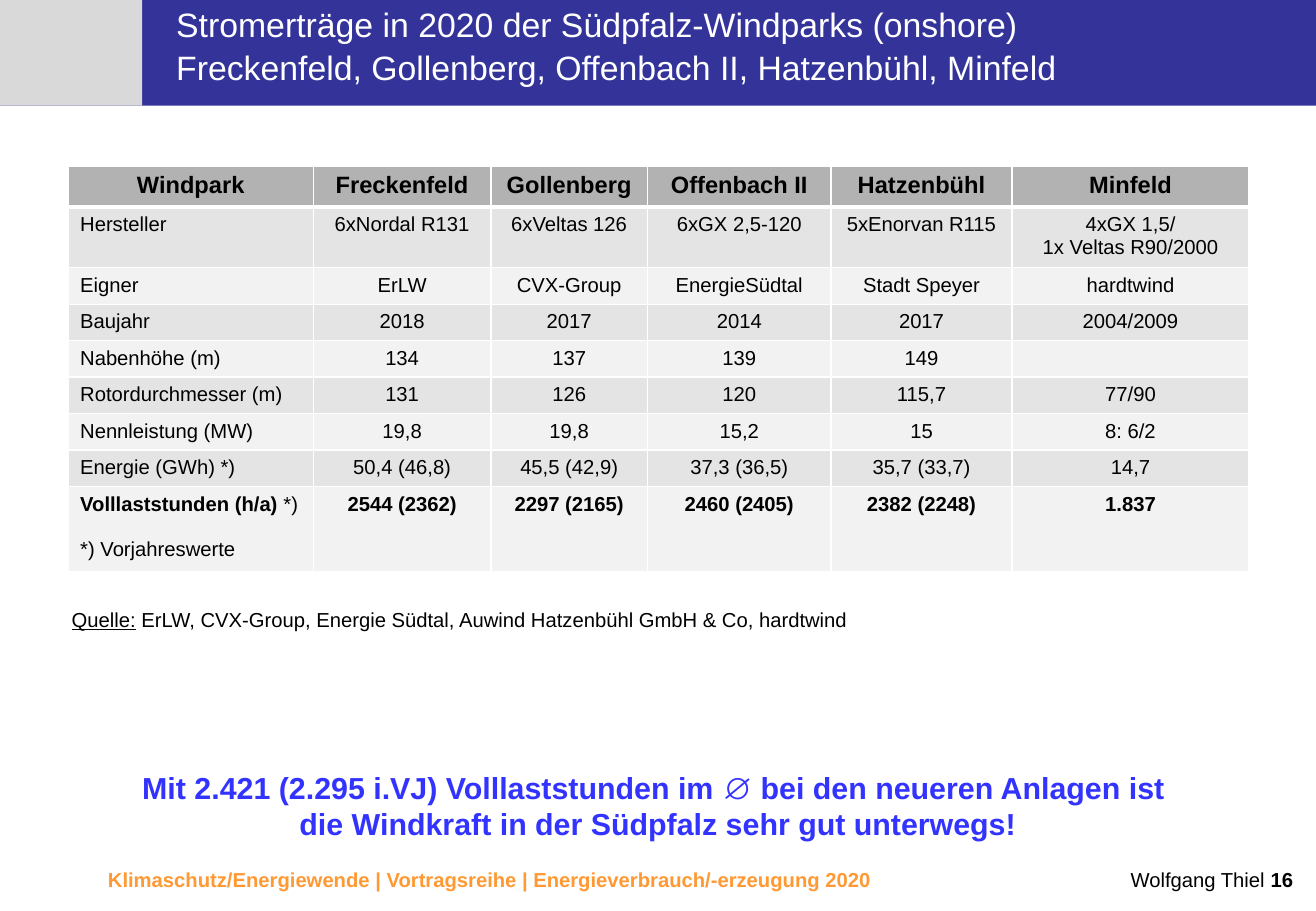
import pptx
import pptx.dml.color
import pptx.enum.shapes
import pptx.enum.text
import pptx.oxml
import pptx.oxml.ns
import pptx.util
from pptx.util import Inches

RGBColor = pptx.dml.color.RGBColor
ALIGN = pptx.enum.text.PP_ALIGN

NAVY = RGBColor(0x33, 0x33, 0x99)
LIGHT_GREY = RGBColor(0xD9, 0xD9, 0xD9)
HEADER_GREY = RGBColor(0xB2, 0xB2, 0xB2)
BANDS = (RGBColor(0xF2, 0xF2, 0xF2), RGBColor(0xE4, 0xE4, 0xE4))
WHITE = RGBColor(0xFF, 0xFF, 0xFF)
BLACK = RGBColor(0x00, 0x00, 0x00)
ORANGE = RGBColor(0xFF, 0x99, 0x33)
BLUE = RGBColor(0x33, 0x33, 0xFF)

COLUMN_WIDTHS = (2.02, 1.46, 1.29, 1.51, 1.49, 1.95)
ROW_HEIGHTS = (0.33, 0.5) + 6 * (0.3,) + (0.7,)
WIND_PARKS = (
    ("Windpark", "Freckenfeld", "Gollenberg", "Offenbach II", "Hatzenbühl", "Minfeld"),
    ("Hersteller", "6xNordal R131", "6xVeltas 126", "6xGX 2,5-120", "5xEnorvan R115",
     "4xGX 1,5/\v1x Veltas R90/2000"),
    ("Eigner", "ErLW", "CVX-Group", "EnergieSüdtal", "Stadt Speyer", "hardtwind"),
    ("Baujahr", "2018", "2017", "2014", "2017", "2004/2009"),
    ("Nabenhöhe (m)", "134", "137", "139", "149", ""),
    ("Rotordurchmesser (m)", "131", "126", "120", "115,7", "77/90"),
    ("Nennleistung (MW)", "19,8", "19,8", "15,2", "15", "8: 6/2"),
    ("Energie (GWh) *)", "50,4 (46,8)", "45,5 (42,9)", "37,3 (36,5)", "35,7 (33,7)", "14,7"),
    ("", "2544 (2362)", "2297 (2165)", "2460 (2405)", "2382 (2248)", "1.837"),
)


def style_paragraph(paragraph, size, color, bold=False, align=ALIGN.LEFT):
    paragraph.alignment = align
    font = paragraph.font
    font.name = "Arial"
    font.size = pptx.util.Pt(size)
    font.bold = bold
    font.color.rgb = color


def add_runs(paragraph, *texts):
    runs = []
    for text in texts:
        run = paragraph.add_run()
        run.text = text
        runs.append(run)
    return runs


def add_block(slide, left, top, width, height, color):
    shape = slide.shapes.add_shape(
        pptx.enum.shapes.MSO_SHAPE.RECTANGLE,
        Inches(left), Inches(top), Inches(width), Inches(height))
    shape.shadow.inherit = False
    shape.fill.solid()
    shape.fill.fore_color.rgb = color
    shape.line.fill.background()


def add_text(slide, left, top, width, height, text, size, color,
             bold=False, align=ALIGN.LEFT, margins=(0, 0), wrap=True):
    """Add a text box and return its paragraph; margins are horizontal, vertical."""
    box = slide.shapes.add_textbox(Inches(left), Inches(top), Inches(width), Inches(height))
    frame = box.text_frame
    frame.word_wrap = wrap
    frame.margin_left = frame.margin_right = Inches(margins[0])
    frame.margin_top = frame.margin_bottom = Inches(margins[1])
    paragraph = frame.paragraphs[0]
    paragraph.text = text
    style_paragraph(paragraph, size, color, bold, align)
    return paragraph


def add_cell_borders(cell, row):
    properties = cell._tc.get_or_add_tcPr()
    for side in "LRTB":
        points = 3 if (row, side) in ((0, "B"), (1, "T")) else 1
        properties.append(pptx.oxml.parse_xml(
            f'<a:ln{side} {pptx.oxml.ns.nsdecls("a")} w="{pptx.util.Pt(points)}">'
            f'<a:solidFill><a:srgbClr val="{WHITE}"/></a:solidFill></a:ln{side}>'))


def add_wind_park_table(slide):
    table = slide.shapes.add_table(
        len(ROW_HEIGHTS), len(COLUMN_WIDTHS), Inches(0.56), Inches(1.37),
        Inches(sum(COLUMN_WIDTHS)), Inches(sum(ROW_HEIGHTS))).table
    table.first_row = table.horz_banding = False
    for column, width in zip(table.columns, COLUMN_WIDTHS):
        column.width = Inches(width)
    for row, height in zip(table.rows, ROW_HEIGHTS):
        row.height = Inches(height)

    last_row = len(WIND_PARKS) - 1
    for row, values in enumerate(WIND_PARKS):
        for column, value in enumerate(values):
            cell = table.cell(row, column)
            add_cell_borders(cell, row)
            cell.fill.solid()
            cell.fill.fore_color.rgb = BANDS[row % 2] if row else HEADER_GREY
            paragraph = cell.text_frame.paragraphs[0]
            paragraph.text = value
            is_label = row > 0 and column == 0
            style_paragraph(paragraph, 12 if row else 14, BLACK,
                            row == 0 or (row == last_row and not is_label),
                            ALIGN.LEFT if is_label else ALIGN.CENTER)

    # Full-load hours label with its footnote
    frame = table.cell(last_row, 0).text_frame
    label, _ = add_runs(frame.paragraphs[0], "Volllaststunden (h/a) ", "*)")
    label.font.bold = True
    footnote = frame.add_paragraph()
    footnote.text = "*) Vorjahreswerte"
    footnote.space_before = pptx.util.Pt(13.5)
    style_paragraph(footnote, 12, BLACK)


def main():
    presentation = pptx.Presentation()
    presentation.slide_width = Inches(10.83)
    presentation.slide_height = Inches(7.5)
    slide = presentation.slides.add_slide(presentation.slide_layouts[6])

    # Header band and title
    add_block(slide, 0, 0, 10.83, 0.87, NAVY)
    add_block(slide, 0, 0, 1.17, 0.87, LIGHT_GREY)
    title = add_text(slide, 1.45, 0.01, 8.16, 0.67,
                     "Stromerträge in 2020 der Südpfalz-Windparks (onshore)\v"
                     "Freckenfeld, Gollenberg, Offenbach II, Hatzenbühl, Minfeld", 20, WHITE)
    title.line_spacing = 1.06

    # Yields and their source
    add_wind_park_table(slide)
    source = add_text(slide, 0.59, 5, 6.64, 0.2, "", 12, BLACK, wrap=False)
    caption, _ = add_runs(
        source, "Quelle:",
        " ErLW, CVX-Group, Energie Südtal, Auwind Hatzenbühl GmbH & Co, hardtwind")
    caption.font.underline = True

    # Conclusion
    add_text(slide, 0, 6.26, 10.83, 0.75,
             "Mit 2.421 (2.295 i.VJ) Volllaststunden im ∅ bei den neueren Anlagen ist \v"
             "die Windkraft in der Südpfalz sehr gut unterwegs!",
             18, BLUE, True, ALIGN.CENTER, (0.07, 0.07))

    # Footer
    add_text(slide, 0.79, 7.09, 6.6, 0.3,
             "Klimaschutz/Energiewende | Vortragsreihe | Energieverbrauch/-erzeugung 2020",
             12, ORANGE, True, margins=(0.1, 0.05))
    author = add_text(slide, 8.01, 7.11, 2.73, 0.28, "", 12, BLACK,
                      align=ALIGN.RIGHT, margins=(0.1, 0.05))
    author.line_spacing = 0.9
    _, page_number = add_runs(author, "Wolfgang Thiel ", "16")
    page_number.font.bold = True

    presentation.save("out.pptx")


if __name__ == "__main__":
    main()
